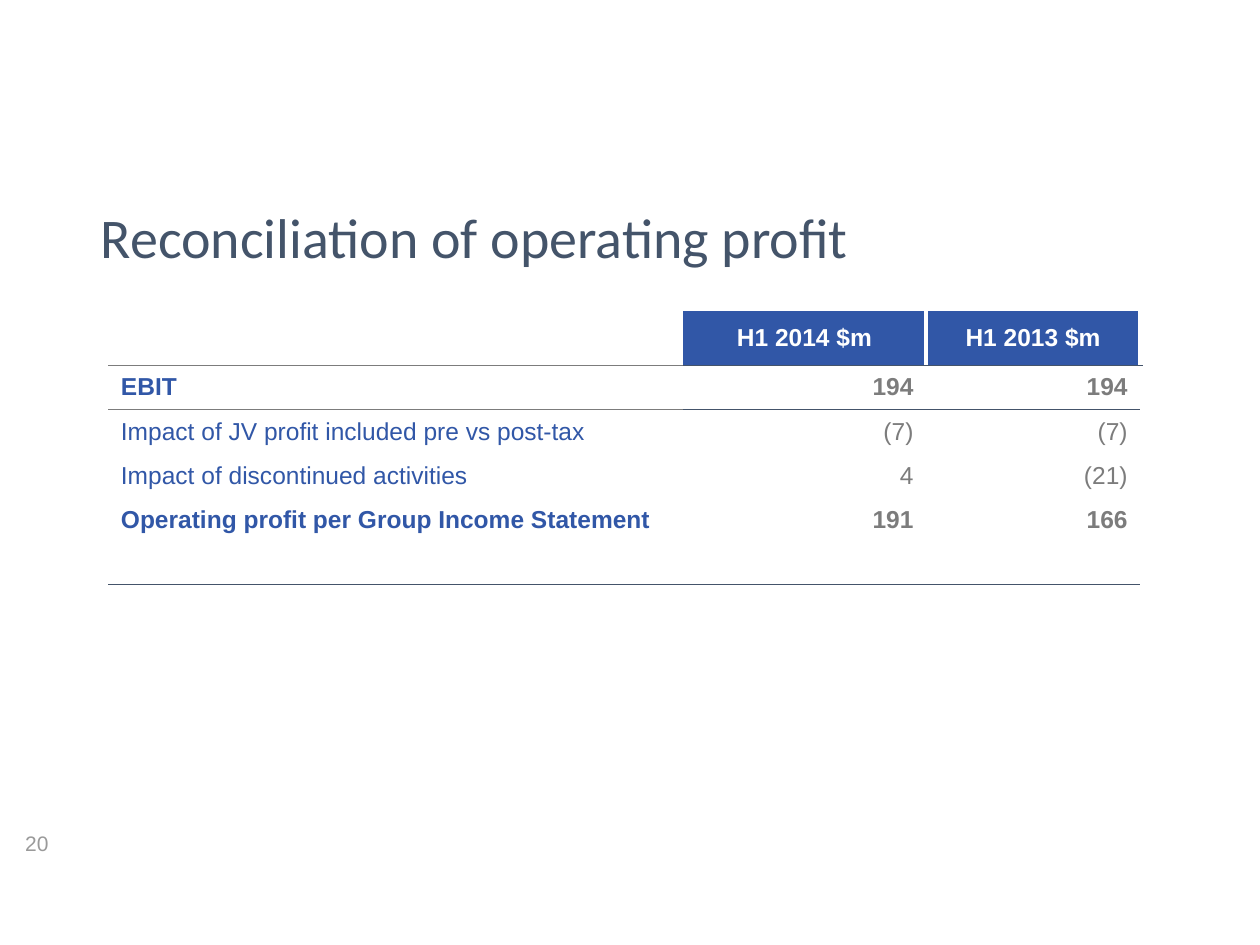
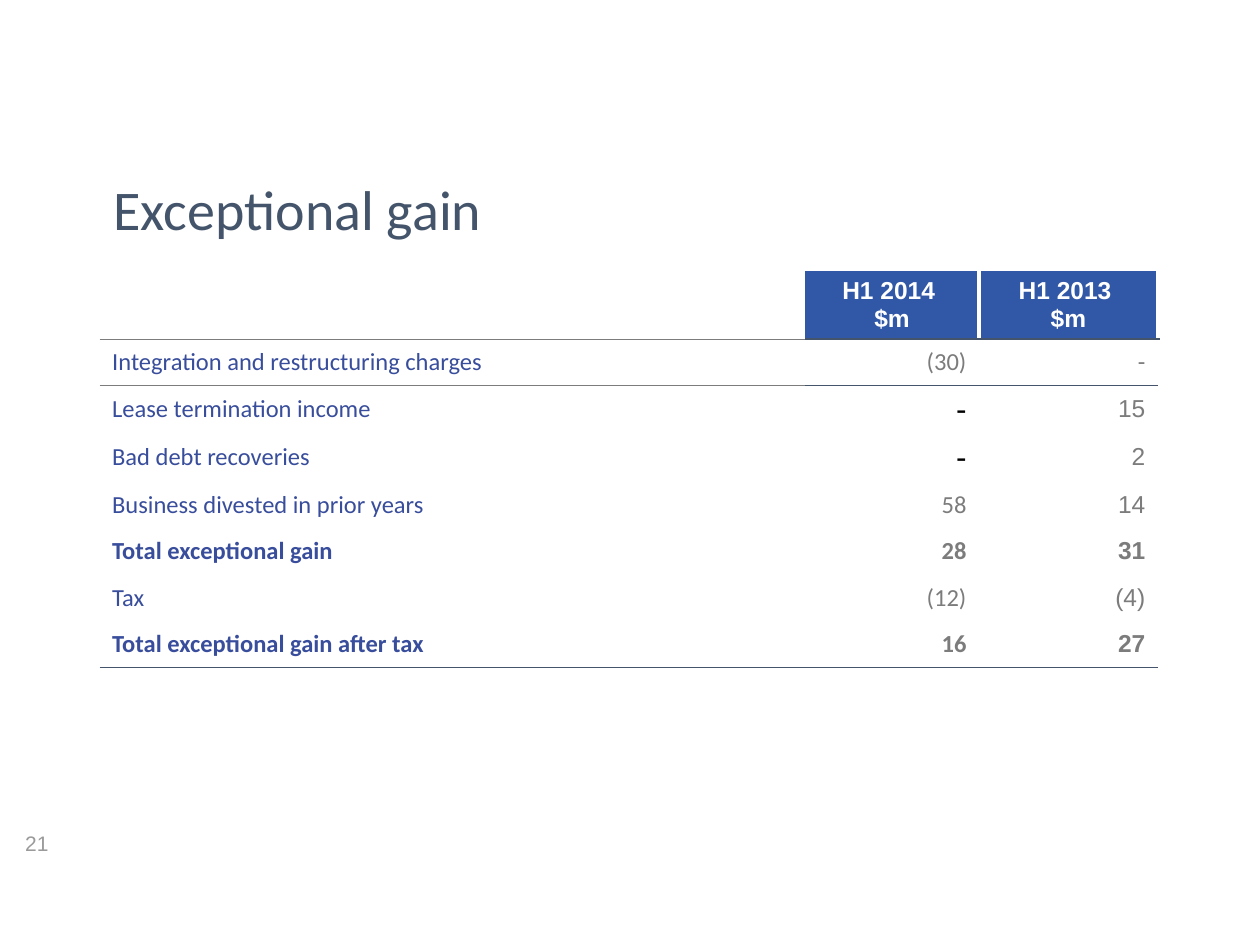
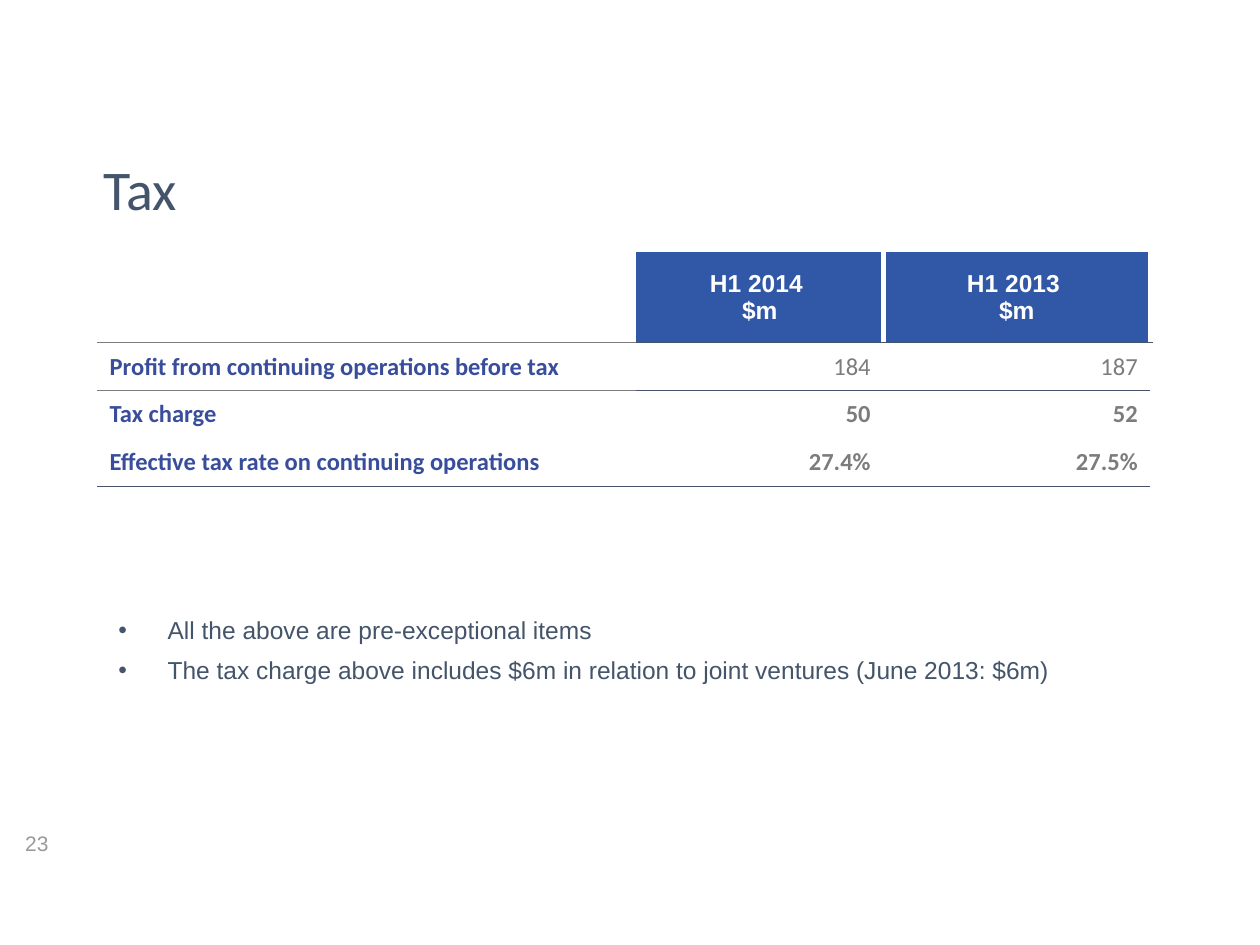
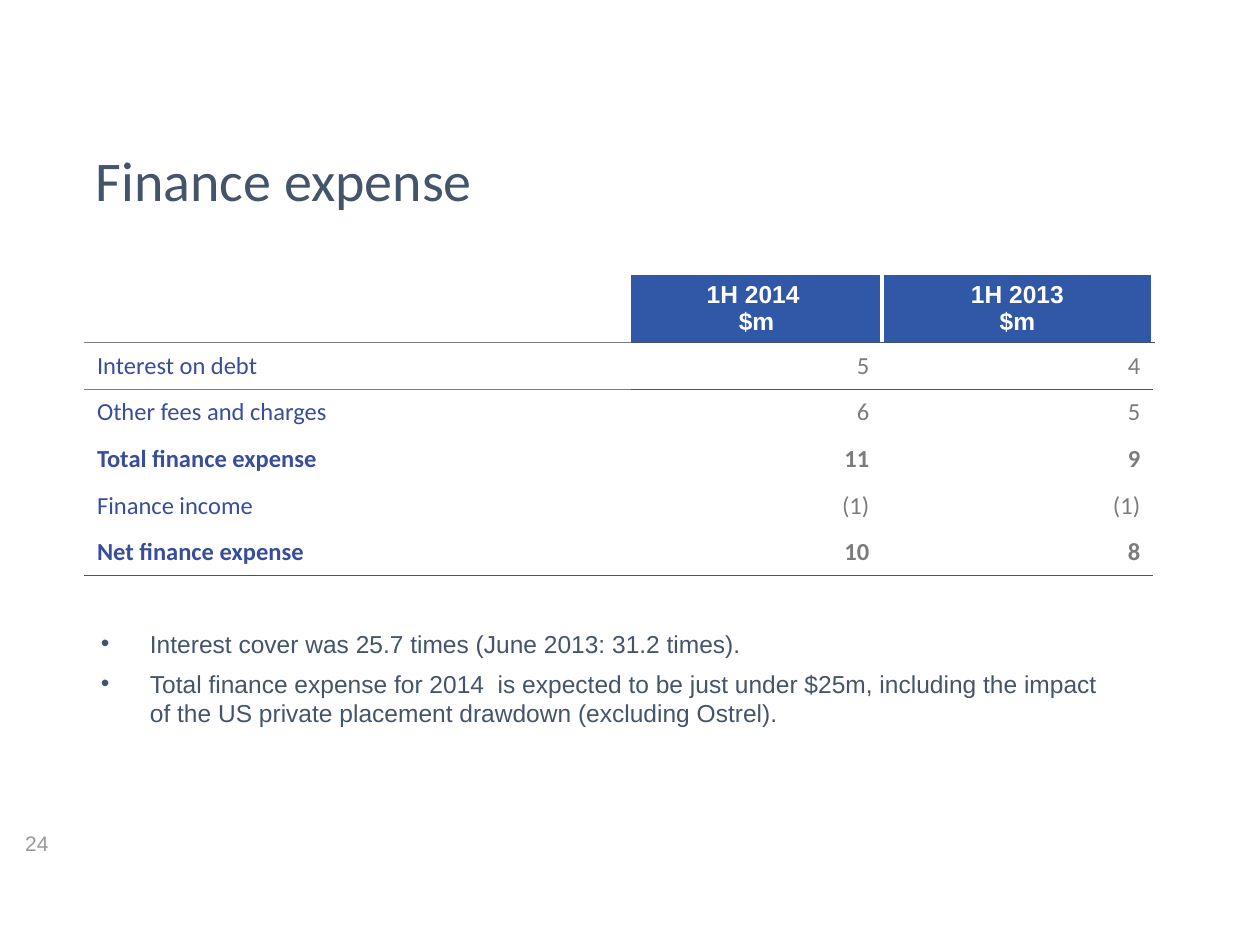
from lxml.etree import SubElement
from pptx import Presentation
from pptx.dml.color import RGBColor
from pptx.enum.text import MSO_ANCHOR, PP_ALIGN
from pptx.oxml.ns import qn
from pptx.util import Inches, Pt

BLUE = RGBColor(0x31, 0x57, 0xA7)
NAVY = RGBColor(0x38, 0x4D, 0x9B)
SLATE = RGBColor(0x44, 0x54, 0x6A)
GREY = RGBColor(0x7C, 0x7C, 0x7C)
PALE = RGBColor(0x9A, 0x9A, 0x9A)
WHITE = RGBColor(0xFF, 0xFF, 0xFF)
BLACK = RGBColor(0, 0, 0)

PLAIN = "{2D5ABB26-0587-4C30-8999-92F81FD0307C}"
TITLE = {"name": "Calibri", "size": Pt(32), "color": SLATE}
NUMBER = {"name": "Arial", "size": Pt(12), "color": PALE}
HEAD = {"name": "Arial", "size": Pt(14), "color": WHITE, "bold": True}
NOTE = {"name": "Arial", "size": Pt(14), "color": SLATE}
DASH = ("-", {"name": "Arial", "size": Pt(18), "color": BLACK})
LIGHT = {"bold": False}

PAGES = [
    {
        "title": "Reconciliation of operating profit", "number": "20",
        "place": (0.7, 1.59, 8.51, 0.64),
        "table": (0.86, 2.47), "cols": (4.56, 1.93, 1.7),
        "heights": (0.43, 0.35, 0.34), "closed": True,
        "fonts": ("Arial", "Arial", "Arial"), "ink": BLUE,
        "heads": ("H1 2014 $m", "H1 2013 $m"),
        "rows": [
            (True, "EBIT", "194", "194"),
            (False, "Impact of JV profit included pre vs post-tax", "(7)", "(7)"),
            (False, "Impact of discontinued activities", "4", "(21)"),
            (True, "Operating profit per Group Income Statement", "191", "166"),
        ],
    },
    {
        "title": "Exceptional gain", "number": "21",
        "place": (0.8, 1.36, 8.5, 0.65),
        "table": (0.79, 2.15), "cols": (5.6, 1.38, 1.42),
        "heights": (0.54, 0.37, 0.37), "closed": False,
        "fonts": ("Calibri", "Calibri", "Arial"), "ink": NAVY,
        "heads": ("H1 2014 \n$m", "H1 2013 \n$m"),
        "rows": [
            (False, "Integration and restructuring charges", "(30)", ("-", {"name": "Calibri"})),
            (False, "Lease termination income", DASH, "15"),
            (False, "Bad debt recoveries", DASH, "2"),
            (False, "Business divested in prior years", "58", "14"),
            (True, "Total exceptional gain", "28", "31"),
            (False, "Tax", "(12)", "(4)"),
            (True, "Total exceptional gain after tax", "16", "27"),
        ],
    },
    {
        "title": "Tax", "number": "23",
        "place": (0.72, 1.2, 8.5, 0.65),
        "table": (0.77, 2), "cols": (4.28, 1.96, 2.12),
        "heights": (0.72, 0.38, 0.38), "closed": False,
        "fonts": ("Calibri", "Calibri", "Calibri"), "ink": NAVY,
        "heads": ("H1 2014 \n$m", "H1 2013 \n$m"),
        "rows": [
            (True, "Profit from continuing operations before tax", ("184", LIGHT), ("187", LIGHT)),
            (True, "Tax charge", "50", "52"),
            (True, "Effective tax rate on continuing operations", "27.4%", "27.5%"),
        ],
        "area": (0.84, 4.83, 8.71, 1.36),
        "notes": [
            "All the above are pre-exceptional items",
            "The tax charge above includes $6m in relation to joint ventures (June 2013: $6m)",
        ],
    },
    {
        "title": "Finance expense", "number": "24",
        "place": (0.66, 1.13, 8.5, 0.65),
        "table": (0.67, 2.18), "cols": (4.34, 1.99, 2.15),
        "heights": (0.54, 0.37, 0.37), "closed": False,
        "fonts": ("Calibri", "Calibri", "Calibri"), "ink": NAVY,
        "heads": ("1H 2014 \n$m", "1H 2013\n$m"),
        "rows": [
            (False, "Interest on debt", "5", "4"),
            (False, "Other fees and charges", "6", "5"),
            (True, "Total finance expense", "11", "9"),
            (False, "Finance income", "(1)", "(1)"),
            (True, "Net finance expense", "10", "8"),
        ],
        "area": (0.7, 4.94, 8.19, 0.89),
        "notes": [
            "Interest cover was 25.7 times (June 2013: 31.2 times).",
            "Total finance expense for 2014  is expected to be just under $25m, "
            "including the impact of the US private placement drawdown (excluding Ostrel).",
        ],
    },
]


def write(frame, text, form, align=PP_ALIGN.LEFT):
    frame.text = text
    for para in frame.paragraphs:
        para.alignment = align
        for run in para.runs:
            for key, value in form.items():
                if key == "color":
                    run.font.color.rgb = value
                else:
                    setattr(run.font, key, value)


def move(shape, box):
    for key, value in zip(("left", "top", "width", "height"), box):
        setattr(shape, key, Inches(value))


def edge(cell, side, color, width):
    line = SubElement(cell._tc.get_or_add_tcPr(), qn("a:ln" + side), w=str(Pt(width)))
    fill = SubElement(line, qn("a:solidFill"))
    SubElement(fill, qn("a:srgbClr"), val=str(color))


def add_edges(grid, closed):
    last = len(grid.rows) - 1
    foot = last if closed else last - 1
    for row in range(last + 1):
        for col in range(3):
            cell = grid.cell(row, col)
            rule = (SLATE, 1) if col else (GREY, 0.5)
            if row == 0:
                if col == 2:
                    edge(cell, "L", WHITE, 3)
                if col:
                    edge(cell, "R", WHITE, 3)
                edge(cell, "B", *rule)
            if row == 1:
                edge(cell, "T", *rule)
            if row == foot + 1:
                edge(cell, "T", SLATE, 1)
            if row == foot:
                edge(cell, "B", SLATE, 1)


def add_grid(slide, page):
    rows = page["rows"]
    head, body, tail = page["heights"]
    sizes = [head] + [body] * len(rows) + [tail]
    left, top = page["table"]
    box = [Inches(v) for v in (left, top, sum(page["cols"]), sum(sizes))]
    grid = slide.shapes.add_table(len(sizes), 3, *box).table
    grid.first_row = grid.horz_banding = False
    grid._tbl.tblPr.find(qn("a:tableStyleId")).text = PLAIN
    for col, width in zip(grid.columns, page["cols"]):
        col.width = Inches(width)
    for row, height in zip(grid.rows, sizes):
        row.height = Inches(height)

    add_edges(grid, page["closed"])
    for cell in grid.iter_cells():
        cell.fill.background()
        cell.vertical_anchor = MSO_ANCHOR.MIDDLE
    for cell in [grid.cell(0, 0)] + list(grid.rows[len(sizes) - 1].cells):
        cell.margin_top = cell.margin_bottom = 0
    for col, text in enumerate(page["heads"], 1):
        cell = grid.cell(0, col)
        cell.fill.solid()
        cell.fill.fore_color.rgb = BLUE
        write(cell.text_frame, text, HEAD, PP_ALIGN.CENTER)
    for row, (bold, *items) in enumerate(rows, 1):
        for col, item in enumerate(items):
            text, extra = item if isinstance(item, tuple) else (item, {})
            form = {"name": page["fonts"][col], "size": Pt(14), "bold": bold,
                    "color": GREY if col else page["ink"], **extra}
            align = PP_ALIGN.RIGHT if col else PP_ALIGN.LEFT
            write(grid.cell(row, col).text_frame, text, form, align)


def add_notes(shape, page):
    move(shape, page["area"])
    write(shape.text_frame, "\n".join(page["notes"]), NOTE)
    for index, para in enumerate(shape.text_frame.paragraphs):
        props = para._p.get_or_add_pPr()
        props.set("marL", str(Inches(0.39)))
        props.set("indent", str(-Inches(0.39)))
        SubElement(props, qn("a:buChar"), char="•")
        para.space_before = Pt(3 if index else 0)
        para.space_after = Pt(3)


def add_page(deck, page):
    slide = deck.slides.add_slide(deck.slide_layouts[1 if "notes" in page else 5])
    title = slide.shapes.title
    move(title, page["place"])
    write(title.text_frame, page["title"], TITLE)
    title.text_frame.vertical_anchor = MSO_ANCHOR.MIDDLE
    title.text_frame.paragraphs[0].line_spacing = 0.9
    add_grid(slide, page)
    if "notes" in page:
        add_notes(slide.placeholders[1], page)

    box = slide.shapes.add_textbox(*[Inches(v) for v in (0.2, 6.59, 0.28, 0.43)])
    frame = box.text_frame
    frame.word_wrap = False
    for side in ("left", "top", "right", "bottom"):
        setattr(frame, "margin_" + side, 0)
    write(frame, page["number"], NUMBER)


def main():
    deck = Presentation()
    deck.slide_width, deck.slide_height = Inches(10), Inches(7.5)
    for page in PAGES:
        add_page(deck, page)
    deck.save("out.pptx")


if __name__ == "__main__":
    main()
